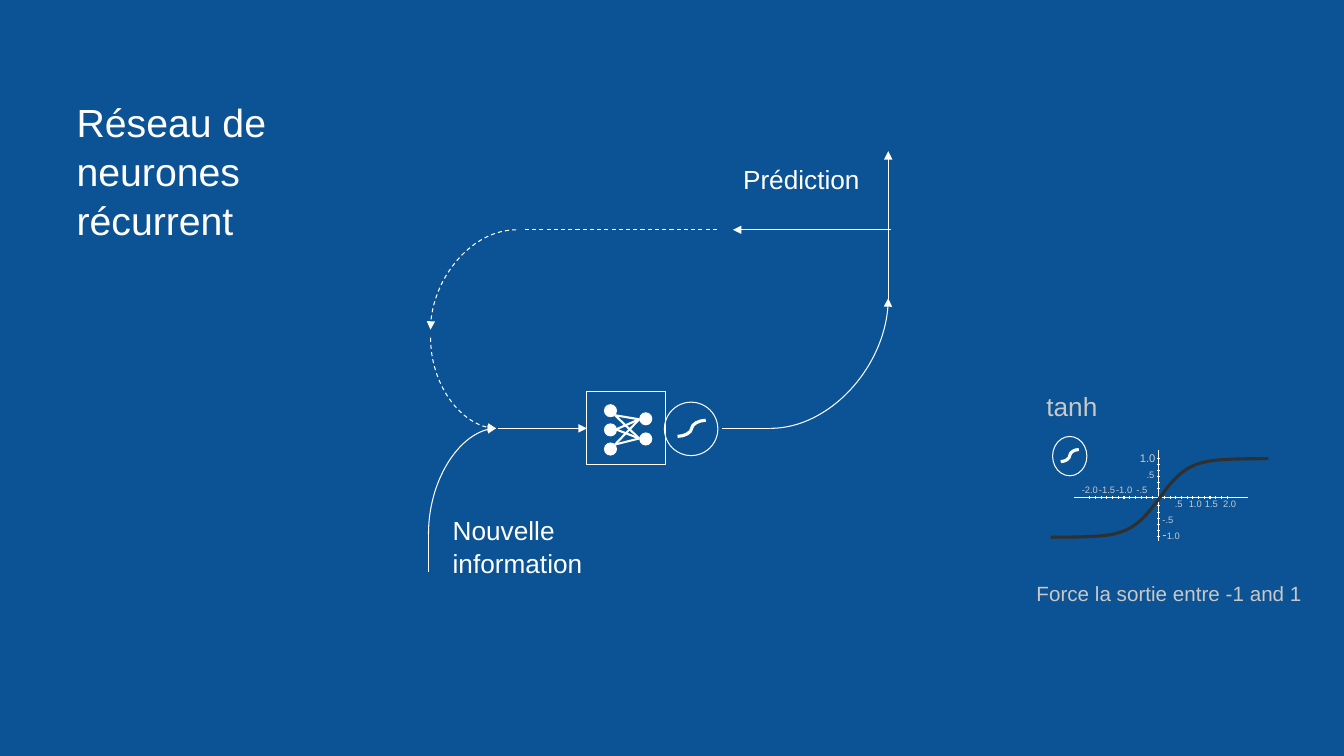
import math
from itertools import product

from lxml import etree
from pptx import Presentation
from pptx.dml.color import RGBColor
from pptx.enum.dml import MSO_LINE
from pptx.enum.shapes import MSO_CONNECTOR, MSO_SHAPE
from pptx.enum.text import MSO_ANCHOR, PP_ALIGN
from pptx.oxml.ns import qn
from pptx.util import Emu, Pt

STRAIGHT, CURVE = MSO_CONNECTOR.STRAIGHT, MSO_CONNECTOR.CURVE
OVAL, RECT = MSO_SHAPE.OVAL, MSO_SHAPE.RECTANGLE
DASH = MSO_LINE.DASH
TOP, MIDDLE = MSO_ANCHOR.TOP, MSO_ANCHOR.MIDDLE
LEFT, RIGHT = PP_ALIGN.LEFT, PP_ALIGN.RIGHT

BLUE = RGBColor(0x0B, 0x53, 0x94)
WHITE = RGBColor(0xFF, 0xFF, 0xFF)
GREY = RGBColor(0xC8, 0xC8, 0xC8)
DARK = RGBColor(0x30, 0x30, 0x30)

PX = 9144  # 100 px to the inch
FONT = "Arial"
THIN, MEDIUM, THICK = 0.75, 1.5, 2.25

# Content: (text, box, size, colour)
TITLE = ("Réseau de neurones récurrent", (63, 83, 311, 286), 28, WHITE)
CAPTIONS = [
    ("Prédiction", (724, 148, 150, 59), 18.7, WHITE),
    ("Nouvelle information", (436, 496, 160, 105), 18.7, WHITE),
    ("Force la sortie entre -1 and 1", (1015, 563, 304, 84), 14.7, GREY),
]
TANH = ("tanh", (1028, 376, 71, 42), 18.7, GREY)

# Network icon
DOT = 13
DOTS = [(599, 401), (599, 420), (599, 439), (634, 409), (634, 429)]
INPUT_ENDS = [(610, 412), (610, 441), (611, 426)]
OUTPUT_ENDS = [(634, 416), (634, 435)]
NETWORK_FRAME = (582, 388, 78, 73)

# Activation icons: (circle, curve start, curve end)
ACTIVATIONS = [
    ((659, 399, 53, 53), (672, 433), (700, 417)),
    ((1044, 433, 34, 39), (1052, 458), (1070, 446)),
]

# Loop: (start, end, bend, dashed, arrow)
LOOP = [
    ((494, 425), (582, 425), "wave", False, True),
    ((764, 425), (881, 296), "across", False, True),
    ((881, 297), (881, 150), None, False, True),
    ((884, 228), (727, 228), None, False, True),
    ((711, 228), (520, 228), None, True, False),
    ((512, 228), (427, 327), "across", True, True),
    ((427, 335), (492, 425), "down", True, True),
    ((425, 530), (492, 425), "down", False, True),
    ((425, 529), (425, 567), None, False, False),
    ((764, 425), (716, 425), None, False, False),
]

# Graph
ORIGIN = (1150, 494)
BRANCH_W, BRANCH_H, STEEPNESS, STEPS = 108, 39, 29, 36
AXES = [((1065, 494), (1238, 494)), ((1149, 446), (1149, 537))]
X_TICK_STARTS, X_TICKS, X_TICK_SPAN = (1081, 1155), 12, 62
Y_TICK_STARTS, Y_TICKS, Y_TICK_GAP = (455, 502), 6, 6
# (runs as (text, size), left, top, width, alignment)
SCALE_LABELS = [
    ([("1.0", 8)], 1121, 447, 25, RIGHT),
    ([(".5", 6.7)], 1126, 464, 19, RIGHT),
    ([("-", 9.3), ("1.0", 6.7)], 1153, 523, 36, LEFT),
    ([("-.5", 6.7)], 1153, 509, 27, LEFT),
]
SCALE_LABELS += [
    ([(text, 6.7)], left, top, 19, RIGHT)
    for top, row in (
        (493, [(".5", 1154), ("1.0", 1173), ("1.5", 1189), ("2.0", 1207)]),
        (479, [("-2.0", 1070), ("-1.5", 1087), ("-1.0", 1104), ("-.5", 1119)]),
    )
    for text, left in row
]


def px(*values):
    return [Emu(round(v * PX)) for v in values]


def stroke(shape, color, width):
    shape.line.color.rgb = color
    shape.line.width = Pt(width)


def add_line(shapes, start, end, width=THIN, bend=None, dashed=False, arrow=False):
    (x1, y1), (x2, y2) = start, end
    if bend == "down":  # a quarter turn makes the curve leave vertically
        cx, cy, dx, dy = (x1 + x2) / 2, (y1 + y2) / 2, x2 - x1, y2 - y1
        x1, x2 = cx + dy / 2, cx - dy / 2
        y1, y2 = cy - dx / 2, cy + dx / 2
    c = shapes.add_connector(CURVE if bend else STRAIGHT, *px(x1, y1, x2, y2))
    stroke(c, WHITE, width)
    if dashed:
        c.line.dash_style = DASH
    sp_pr = c.element.spPr
    if bend in ("across", "down"):
        sp_pr.find(qn("a:prstGeom")).set("prst", "curvedConnector2")
    if bend == "down":
        sp_pr.find(qn("a:xfrm")).set("rot", str(270 * 60000))
    if arrow:
        etree.SubElement(sp_pr.find(qn("a:ln")), qn("a:tailEnd"), type="triangle")
    etree.SubElement(sp_pr, qn("a:effectLst"))


def add_outline(shapes, kind, box):
    sp = shapes.add_shape(kind, *px(*box))
    sp.shadow.inherit = False
    sp.fill.background()
    stroke(sp, WHITE, THIN)
    return sp


def write(sp, runs, color, inset=13, anchor=TOP, align=LEFT, wrap=True, spacing=1.04):
    tf = sp.text_frame
    margin = px(inset)[0]
    frame_format = {"word_wrap": wrap, "vertical_anchor": anchor}
    for side in ("left", "top", "right", "bottom"):
        frame_format["margin_" + side] = margin
    for name, value in frame_format.items():
        setattr(tf, name, value)
    p = tf.paragraphs[0]
    p.alignment, p.line_spacing = align, spacing
    for text, size in runs:
        r = p.add_run()
        r.text = text
        r.font.name, r.font.size, r.font.color.rgb = FONT, Pt(size), color


def add_activation(shapes, circle, start, end):
    group = shapes.add_group_shape().shapes
    add_outline(group, OVAL, circle)
    add_line(group, start, end, THICK, "wave")


prs = Presentation()
prs.slide_width, prs.slide_height = px(1333, 750)
s = prs.slides.add_slide(prs.slide_layouts[5])
s.background.fill.solid()
s.background.fill.fore_color.rgb = BLUE

# Title
text, box, size, color = TITLE
title = s.shapes.title
title.left, title.top, title.width, title.height = px(*box)
write(title, [(text, size)], color)

# Network icon
network = s.shapes.add_group_shape().shapes
for x, y in DOTS:
    dot = add_outline(network, OVAL, (x, y, DOT, DOT))
    dot.fill.solid()
    dot.fill.fore_color.rgb = WHITE
    dot.line.fill.background()
for start, end in product(INPUT_ENDS, OUTPUT_ENDS):
    add_line(network, start, end, MEDIUM)
add_outline(network, RECT, NETWORK_FRAME)

# Loop, with the activation after the network
add_activation(s.shapes, *ACTIVATIONS[0])
for start, end, bend, dashed, arrow in LOOP:
    add_line(s.shapes, start, end, THIN, bend, dashed, arrow)

# Captions
for text, box, size, color in CAPTIONS:
    write(s.shapes.add_textbox(*px(*box)), [(text, size)], color)

# Graph axes and ticks
graph = s.shapes.add_group_shape().shapes
for start, end in AXES:
    add_line(graph, start, end)
for first, i in product(Y_TICK_STARTS, range(Y_TICKS)):
    y = first + i * Y_TICK_GAP
    add_line(graph, (1148, y), (1151, y))
for first, i in product(X_TICK_STARTS, range(X_TICKS)):
    x = first + i * X_TICK_SPAN / (X_TICKS - 1)
    add_line(graph, (x, 492), (x, 495))
for runs, left, top, width, align in SCALE_LABELS:
    label = graph.add_textbox(*px(left, top, width, 14))
    write(label, runs, GREY, inset=0, anchor=MIDDLE, align=align, spacing=1.0)

# Graph curve, one branch on each side of the origin
for side in (1, -1):
    points = []
    for i in range(STEPS + 1):
        dx = BRANCH_W * i / STEPS
        dy = BRANCH_H * math.tanh(dx / STEEPNESS)
        points.append(px(ORIGIN[0] + side * dx, ORIGIN[1] - side * dy))
    builder = graph.build_freeform(*points[0])
    builder.add_line_segments(points[1:], close=False)
    branch = builder.convert_to_shape()
    branch.shadow.inherit = False
    branch.fill.background()
    stroke(branch, DARK, THICK)

# Graph heading
add_activation(s.shapes, *ACTIVATIONS[1])
text, box, size, color = TANH
write(s.shapes.add_textbox(*px(*box)), [(text, size)], color, inset=10, wrap=False)

prs.save("out.pptx")
